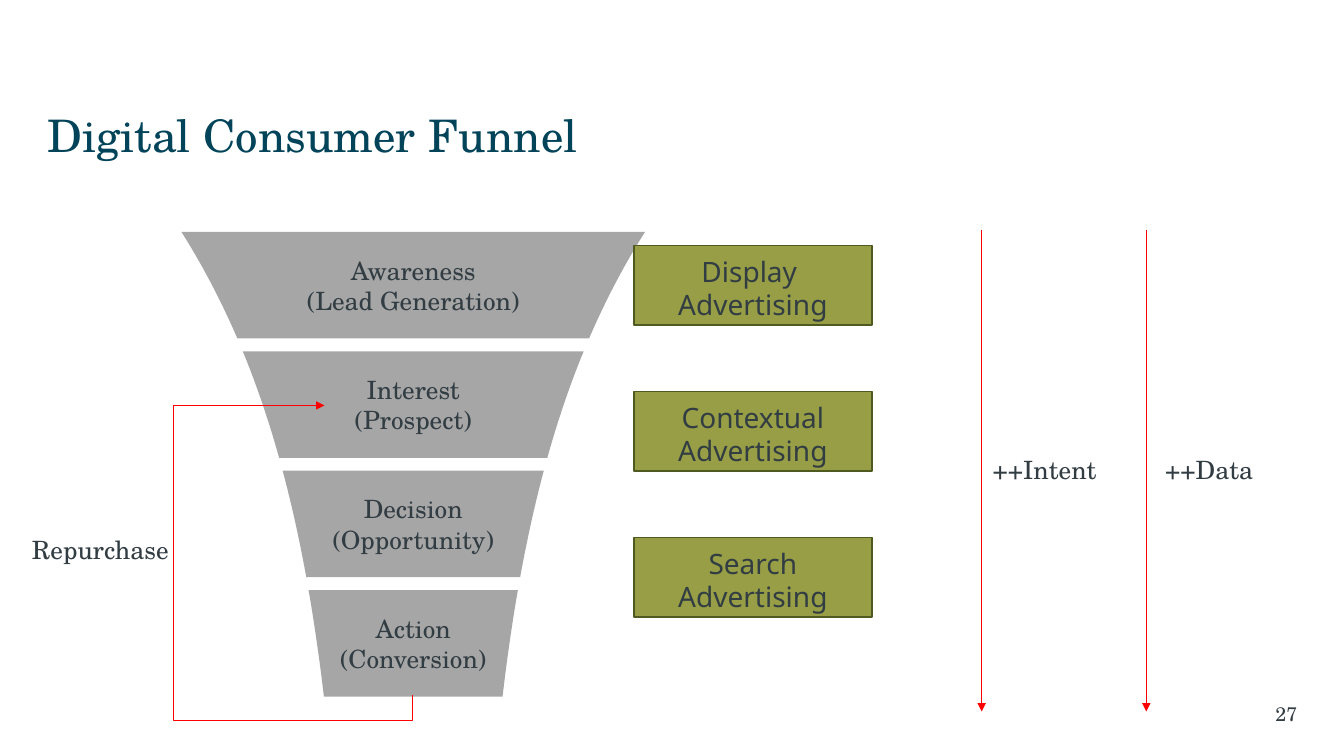
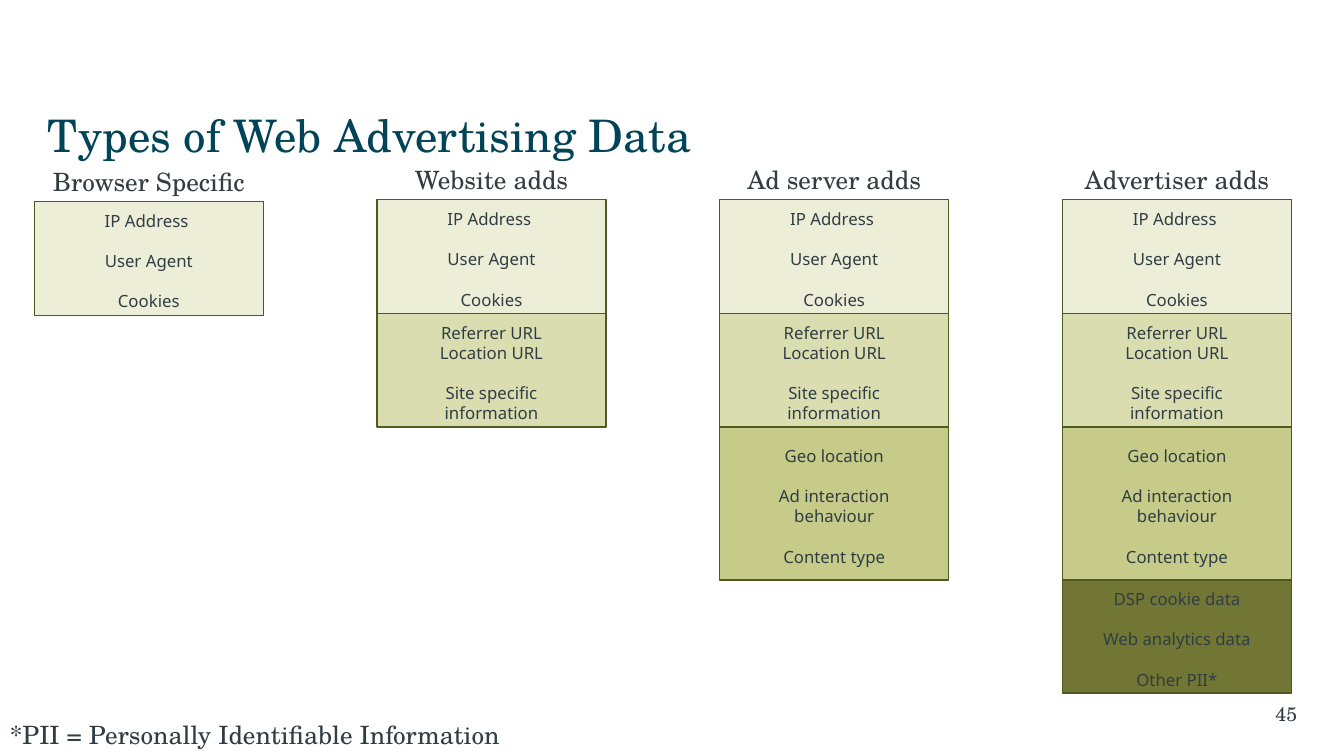
from dataclasses import dataclass
from math import exp
from typing import NamedTuple

from lxml.etree import SubElement
from pptx import Presentation
from pptx.dml.color import RGBColor
from pptx.enum.shapes import MSO_CONNECTOR, MSO_SHAPE
from pptx.enum.text import MSO_ANCHOR, PP_ALIGN
from pptx.oxml.ns import qn
from pptx.util import Pt


class Box(NamedTuple):
    left: float
    top: float
    width: float
    height: float

    def lengths(self):
        return [Pt(value) for value in self]


class TextStyle(NamedTuple):
    font: str
    size: float
    color: str
    align: PP_ALIGN = PP_ALIGN.LEFT
    line_height: float = 0
    group_gap: float = 0


SERIF, SANS, INK = "TeX Gyre Schola", "Noto Sans", "323D43"


@dataclass(frozen=True)
class Theme:
    title: TextStyle = TextStyle(SERIF, 32, "014359")
    number: TextStyle = TextStyle(SERIF, 14, INK, PP_ALIGN.RIGHT)
    label: TextStyle = TextStyle(SERIF, 18, INK)
    heading: TextStyle = TextStyle(SERIF, 18, INK, PP_ALIGN.CENTER)
    channel: TextStyle = TextStyle(SANS, 20, INK, PP_ALIGN.CENTER, 23.7)
    data: TextStyle = TextStyle(SANS, 12, INK, PP_ALIGN.CENTER, 14.4, 14.4)
    text_insets: tuple = (7.2, 3.6, 7.2, 3.6)
    block_insets: tuple = (7.2, 3.6, 7.2, 0)
    stage: str = "A6A6A6"
    olive: str = "979E45"
    outline: str = "4F5A20"
    arrow: str = "FF0000"
    line_width: float = 1


THEME = Theme()
SLIDE = Box(0, 0, 960, 540)
TITLE = Box(33.8, 70.6, 892, 51)
NUMBER = Box(742.3, 497.5, 184.3, 24.5)
LABEL_HEIGHT = 28.8

STAGES = [
    ("Awareness", "(Lead Generation)"),
    ("Interest", "(Prospect)"),
    ("Decision", "(Opportunity)"),
    ("Action", "(Conversion)"),
]
CHANNELS = [
    ("Display ", "Advertising"),
    ("Contextual", "Advertising"),
    ("Search", "Advertising"),
]
# Each data layer: fill, height, groups of lines
LAYERS = [
    ("ECEED8", 81.2, [("IP Address ",), ("User Agent",), ("Cookies",)]),
    ("D9DDB0", 81.2, [("Referrer URL", "Location URL"),
                      ("Site specific", "information")]),
    ("C6CB89", 109.4, [("Geo location",), ("Ad interaction", "behaviour"),
                       ("Content type",)]),
    ("717634", 80.8, [("DSP cookie data",), ("Web analytics data",),
                      ("Other PII*",)]),
]
# Each party sees one layer more than the party before it
PARTIES = [("Browser Specific", 144), ("Website adds", 142.6),
           ("Ad server adds", 142.6), ("Advertiser adds", 142.6)]


def set_all(target, values):
    for name, value in values.items():
        setattr(target, name, value)


def write(frame, groups, style, insets, anchor=MSO_ANCHOR.MIDDLE, wrap=True):
    """Write groups of lines, one paragraph a line, with a gap between groups."""
    sides = ("margin_left", "margin_top", "margin_right", "margin_bottom")
    set_all(frame, dict(zip(sides, map(Pt, insets))))
    set_all(frame, {"vertical_anchor": anchor, "word_wrap": wrap})
    paragraph = None
    for group in groups:
        for index, line in enumerate(group):
            starts_group = paragraph is not None and index == 0
            paragraph = (frame.paragraphs[0] if paragraph is None
                         else frame.add_paragraph())
            paragraph.alignment = style.align
            if style.line_height:
                paragraph.line_spacing = Pt(style.line_height)
            if starts_group:
                paragraph.space_before = Pt(style.group_gap)
            run = paragraph.add_run()
            run.text = line
            set_all(run.font, {"name": style.font, "size": Pt(style.size)})
            run.font.color.rgb = RGBColor.from_string(style.color)


def add_text(slide, box, text, style, insets=THEME.text_insets,
             anchor=MSO_ANCHOR.TOP):
    frame = slide.shapes.add_textbox(*box.lengths()).text_frame
    write(frame, [(text,)], style, insets, anchor)


def draw_line(shape, color):
    shape.line.color.rgb = RGBColor.from_string(color)
    shape.line.width = Pt(THEME.line_width)


def add_arrowhead(shape):
    outline = shape.element.spPr.find(qn("a:ln"))
    SubElement(outline, qn("a:tailEnd"), type="triangle")


def add_block(slide, box, fill, groups, style):
    block = slide.shapes.add_shape(MSO_SHAPE.RECTANGLE, *box.lengths())
    block.shadow.inherit = False
    block.fill.solid()
    block.fill.fore_color.rgb = RGBColor.from_string(fill)
    draw_line(block, THEME.outline)
    write(block.text_frame, groups, style, THEME.block_insets, wrap=False)


def add_outline(slide, points, close):
    start, *rest = [(Pt(x), Pt(y)) for x, y in points]
    builder = slide.shapes.build_freeform(*start)
    builder.add_line_segments(rest, close=close)
    outline = builder.convert_to_shape()
    outline.shadow.inherit = False
    return outline


def add_funnel(slide, box, gap=9.2, steps=12):
    """Stack the stages inside one funnel whose sides narrow exponentially."""
    center = box.left + box.width / 2
    stage_height = (box.height - gap * (len(STAGES) - 1)) / len(STAGES)

    def half_width(y):
        share = (y - box.top) / box.height
        return box.width * (0.122 + 0.378 * exp(-1.678 * share))

    for index, lines in enumerate(STAGES):
        top = box.top + index * (stage_height + gap)
        levels = [top + stage_height * step / steps for step in range(steps + 1)]
        left_side = [(center - half_width(y), y) for y in levels]
        right_side = [(center + half_width(y), y) for y in reversed(levels)]
        stage = add_outline(slide, left_side + right_side, close=True)
        stage.fill.solid()
        stage.fill.fore_color.rgb = RGBColor.from_string(THEME.stage)
        stage.line.fill.background()
        write(stage.text_frame, [lines], THEME.heading, (0, 0, 0, 0))


def add_repurchase_loop(slide, box, start_x, start_y, end_x):
    """Lead from the last stage round the left side back to the second."""
    bottom = box.top + box.height
    loop = add_outline(slide, [
        (start_x, start_y), (start_x, bottom), (box.left, bottom),
        (box.left, box.top), (end_x, box.top)], close=False)
    loop.fill.background()
    draw_line(loop, THEME.arrow)
    add_arrowhead(loop)
    add_text(slide, Box(box.left - 108, box.top + 88.6, 158.4, LABEL_HEIGHT),
             "Repurchase", THEME.label)


def add_channels(slide, box, block_height=56.8):
    pitch = (box.height - block_height) / (len(CHANNELS) - 1)
    for index, lines in enumerate(CHANNELS):
        block = Box(box.left, box.top + index * pitch, box.width, block_height)
        add_block(slide, block, THEME.olive, [lines], THEME.channel)


def add_growth_arrow(slide, box, text, label_offset):
    ends = (box.left, box.top, box.left, box.top + box.height)
    arrow = slide.shapes.add_connector(MSO_CONNECTOR.STRAIGHT, *map(Pt, ends))
    draw_line(arrow, THEME.arrow)
    add_arrowhead(arrow)
    SubElement(arrow.element.spPr, qn("a:effectLst"))
    label = Box(box.left + label_offset, box.top + 157, box.width, LABEL_HEIGHT)
    add_text(slide, label, text, THEME.label)


def add_party(slide, box, heading, layers):
    """Set a heading over a stack of data layers that fills the box downwards."""
    add_text(slide, box._replace(height=LABEL_HEIGHT), heading, THEME.heading)
    top = box.top + LABEL_HEIGHT
    for fill, height, groups in layers:
        add_block(slide, Box(box.left, top, box.width, height), fill, groups,
                  THEME.data)
        top += height


def add_titled_slide(deck, title, number):
    slide = deck.slides.add_slide(deck.slide_layouts[6])
    add_text(slide, TITLE, title, THEME.title, (0, 3.6, 7.2, 3.6),
             MSO_ANCHOR.MIDDLE)
    add_text(slide, NUMBER, number, THEME.number, (7.2, 3.6, 0, 3.6),
             MSO_ANCHOR.MIDDLE)
    return slide


def build_funnel_slide(deck):
    slide = add_titled_slide(deck, "Digital Consumer Funnel", "27")
    add_funnel(slide, Box(129.6, 165.6, 331.2, 332))
    add_repurchase_loop(slide, Box(123.8, 289.6, 170.7, 225.2),
                        start_x=294.5, start_y=496.8, end_x=231.8)
    add_growth_arrow(slide, Box(701.2, 164.2, 158.4, 344), "++Intent", 0.8)
    add_growth_arrow(slide, Box(818.8, 164.2, 158.4, 344), "++Data", 6.4)
    add_channels(slide, Box(452.8, 175.5, 170, 265.2))


def build_data_slide(deck, left=24.5, pitch=244.8, width=163.6):
    slide = add_titled_slide(deck, "Types of Web Advertising Data", "45")
    for index, (heading, stack_top) in enumerate(PARTIES):
        layers = LAYERS[:index + 1]
        height = LABEL_HEIGHT + sum(layer[1] for layer in layers)
        column = Box(left + index * pitch, stack_top - LABEL_HEIGHT, width, height)
        add_party(slide, column, heading, layers)
    add_text(slide, Box(0, 510.6, 410.4, LABEL_HEIGHT),
             "*PII = Personally Identifiable Information", THEME.label)


def main():
    deck = Presentation()
    set_all(deck, {"slide_width": Pt(SLIDE.width), "slide_height": Pt(SLIDE.height)})
    build_funnel_slide(deck)
    build_data_slide(deck)
    deck.save("out.pptx")


if __name__ == "__main__":
    main()
